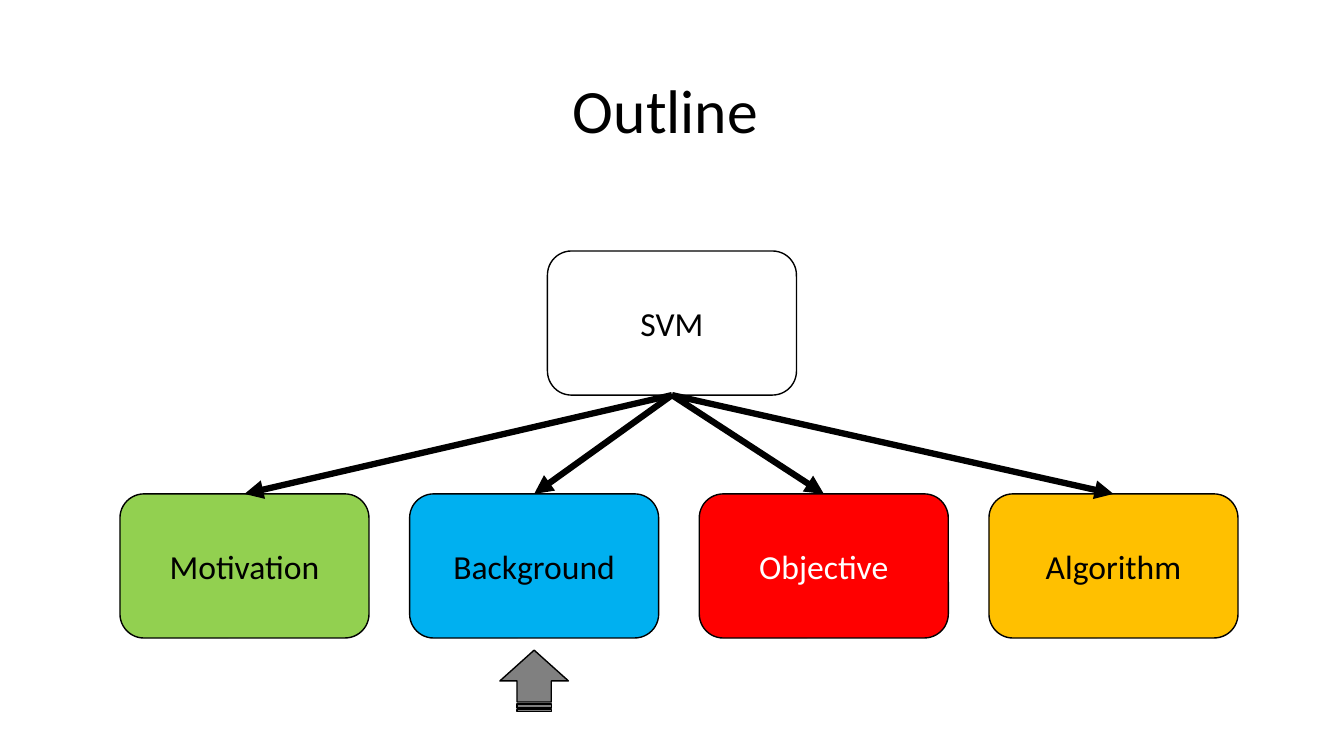
import pptx
import pptx.dml.color
import pptx.enum.shapes
import pptx.enum.text
import pptx.oxml
import pptx.oxml.ns
import pptx.util

Inches = pptx.util.Inches
Pt = pptx.util.Pt
SHAPES = pptx.enum.shapes.MSO_SHAPE

BLACK, WHITE = "000000", "FFFFFF"
BOX_WIDTH, BOX_HEIGHT = 2.47, 1.43
TOPIC_STEP = 2.873
TOPICS = [
    ("Motivation", "92D050", BLACK),
    ("Background", "00B0F0", BLACK),
    ("Objective", "FF0000", WHITE),
    ("Algorithm", "FFC000", BLACK),
]
CURRENT_TOPIC = 1


def color(hex_string):
    return pptx.dml.color.RGBColor.from_string(hex_string)


def write_text(shape, text, size=24, font_color=BLACK, line_spacing=1.0):
    frame = shape.text_frame
    frame.word_wrap = True
    frame.vertical_anchor = pptx.enum.text.MSO_ANCHOR.MIDDLE
    paragraph = frame.paragraphs[0]
    paragraph.alignment = pptx.enum.text.PP_ALIGN.CENTER
    paragraph.line_spacing = line_spacing
    run = paragraph.add_run()
    run.text = text
    run.font.name = "Calibri"
    run.font.size = Pt(size)
    run.font.color.rgb = color(font_color)


def add_outlined_shape(slide, kind, left, top, width, height, fill):
    shape = slide.shapes.add_shape(
        kind, Inches(left), Inches(top), Inches(width), Inches(height))
    shape.shadow.inherit = False
    shape.fill.solid()
    shape.fill.fore_color.rgb = color(fill)
    shape.line.color.rgb = color(BLACK)
    shape.line.width = Pt(1)
    return shape


def add_topic_box(slide, left, top, text, fill, font_color=BLACK):
    box = add_outlined_shape(slide, SHAPES.ROUNDED_RECTANGLE,
                             left, top, BOX_WIDTH, BOX_HEIGHT, fill)
    write_text(box, text, font_color=font_color)
    return box


def add_branch(slide, parent, child):
    """Draw an arrow from the parent's bottom centre to the child's top centre."""
    connector = slide.shapes.add_connector(
        pptx.enum.shapes.MSO_CONNECTOR.STRAIGHT, 0, 0, 0, 0)
    connector.begin_connect(parent, 2)
    connector.end_connect(child, 0)
    connector.line.color.rgb = color(BLACK)
    connector.line.width = Pt(4.5)
    line = connector.line._get_or_add_ln()
    arrowhead = pptx.oxml.parse_xml(
        f'<a:tailEnd {pptx.oxml.ns.nsdecls("a")} type="triangle"/>')
    line.append(arrowhead)
    connector._element.spPr.append(
        pptx.oxml.parse_xml(f'<a:effectLst {pptx.oxml.ns.nsdecls("a")}/>'))


def add_title(slide, left, top, width, height):
    title = slide.shapes.add_textbox(
        Inches(left), Inches(top), Inches(width), Inches(height))
    write_text(title, "Outline ", size=44, line_spacing=0.9)


def add_marker(slide, center, top, length=0.61, breadth=0.68):
    """Place an upward arrow; its unrotated frame lies on its side."""
    marker = add_outlined_shape(
        slide, SHAPES.STRIPED_RIGHT_ARROW, center - length / 2,
        top + (length - breadth) / 2, length, breadth, "808080")
    marker.rotation = 270


def add_tree(slide, left, top):
    # Root
    root = add_topic_box(slide, left + 4.24, top, "SVM", WHITE)

    # Topics and their branches
    topics_top = top + 2.41
    for index, (text, fill, font_color) in enumerate(TOPICS):
        box = add_topic_box(slide, left + index * TOPIC_STEP, topics_top,
                            text, fill, font_color)
        add_branch(slide, root, box)

    # Marker under the current topic
    center = left + CURRENT_TOPIC * TOPIC_STEP + BOX_WIDTH / 2
    add_marker(slide, center, topics_top + BOX_HEIGHT + 0.12)


def main():
    presentation = pptx.Presentation()
    presentation.slide_width = Inches(13.33)
    presentation.slide_height = Inches(7.5)
    slide = presentation.slides.add_slide(presentation.slide_layouts[6])
    add_title(slide, 0.92, 0.4, 11.5, 1.45)
    add_tree(slide, 1.19, 2.49)
    presentation.save("out.pptx")


if __name__ == "__main__":
    main()
